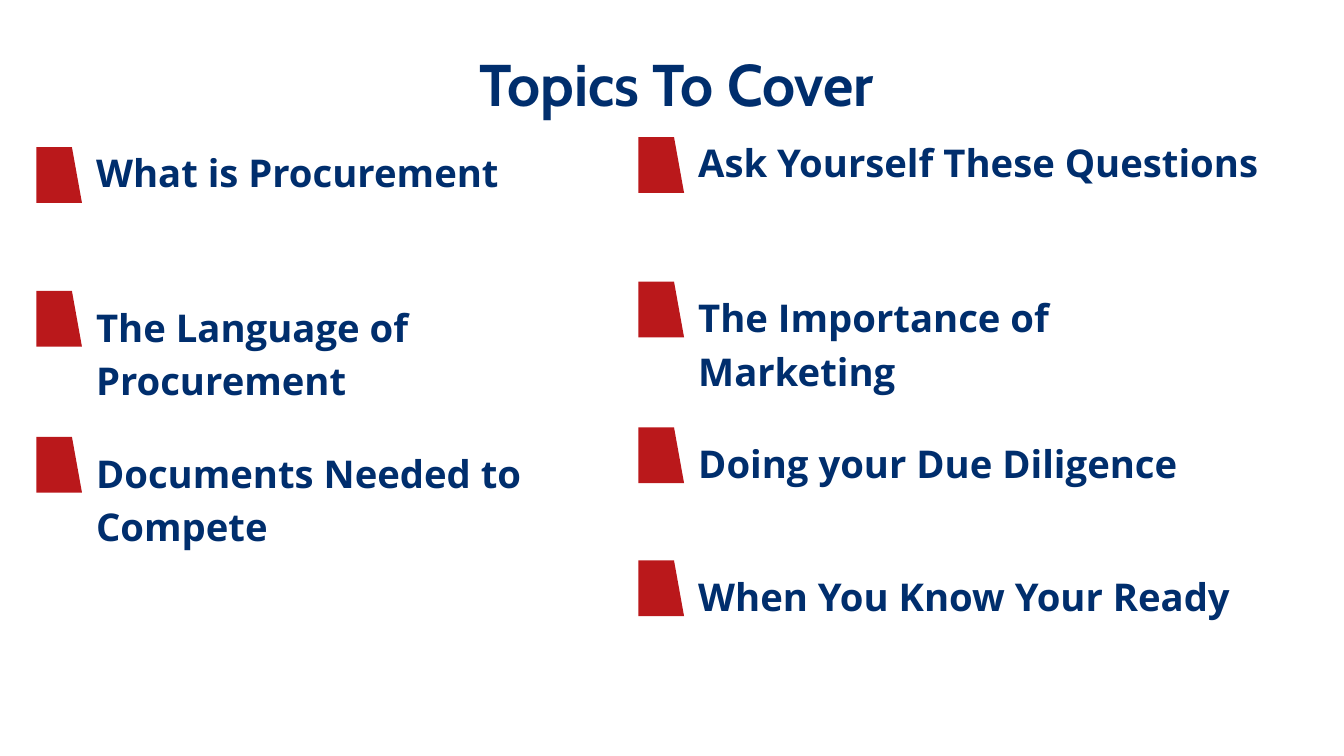
from pptx import Presentation
from pptx.dml.color import RGBColor
from pptx.enum.text import PP_ALIGN
from pptx.util import Inches, Pt

NAVY = RGBColor(0x00, 0x2E, 0x6D)
RED = RGBColor(0xBA, 0x18, 0x1B)
CENTER = PP_ALIGN.CENTER
LEFT = PP_ALIGN.LEFT

MARKER_HEIGHT = 0.83
TEXT_INDENT = 0.89
SINGLE = 45.8
WRAPPED = 57.4

COLUMNS = [
    (0.54, [
        (2.19, 8.9, SINGLE, "What is Procurement"),
        (4.33, 8.06, WRAPPED, "The Language of Procurement"),
        (6.5, 8.06, WRAPPED, "Documents Needed to Compete"),
    ]),
    (9.5, [
        (2.04, 8.9, SINGLE, "Ask Yourself These Questions"),
        (4.19, 8.06, WRAPPED, "The Importance of Marketing"),
        (6.36, 8.06, WRAPPED, "Doing your Due Diligence"),
        (8.34, 8.06, WRAPPED, "When You Know Your Ready"),
    ]),
]


def add_text(s, x, y, w, h, text, font, size, spacing, align=LEFT):
    tf = s.shapes.add_textbox(Inches(x), Inches(y), Inches(w), Inches(h)).text_frame
    tf.word_wrap = True
    tf.margin_left = tf.margin_right = tf.margin_top = tf.margin_bottom = 0
    p = tf.paragraphs[0]
    p.alignment = align
    p.line_spacing = Pt(spacing)
    r = p.add_run()
    r.text = text
    r.font.name = font
    r.font.size = Pt(size)
    r.font.bold = True
    r.font.color.rgb = NAVY


def add_marker(s, x, y):
    bottom = y + MARKER_HEIGHT
    corners = [(x + 0.53, y), (x + 0.68, bottom), (x, bottom)]
    outline = s.shapes.build_freeform(Inches(x), Inches(y))
    outline.add_line_segments([(Inches(a), Inches(b)) for a, b in corners])
    sp = outline.convert_to_shape()
    sp.shadow.inherit = False
    sp.fill.solid()
    sp.fill.fore_color.rgb = RED
    sp.line.fill.background()


def add_topic(s, x, y, w, spacing, text):
    add_marker(s, x, y)
    h = 1.01 if spacing == SINGLE else 1.6
    add_text(s, x + TEXT_INDENT, y + 0.08, w, h, text, "Open Sans", 41, spacing)


def main():
    prs = Presentation()
    prs.slide_width, prs.slide_height = Inches(20), Inches(11.25)
    s = prs.slides.add_slide(prs.slide_layouts[6])
    add_text(s, 7.13, 0.77, 7.44, 0.89, "Topics To Cover", "Cabin", 63, 71, LEFT)
    for x, topics in COLUMNS:
        for y, w, spacing, text in topics:
            add_topic(s, x, y, w, spacing, text)
    prs.save("out.pptx")


if __name__ == "__main__":
    main()
